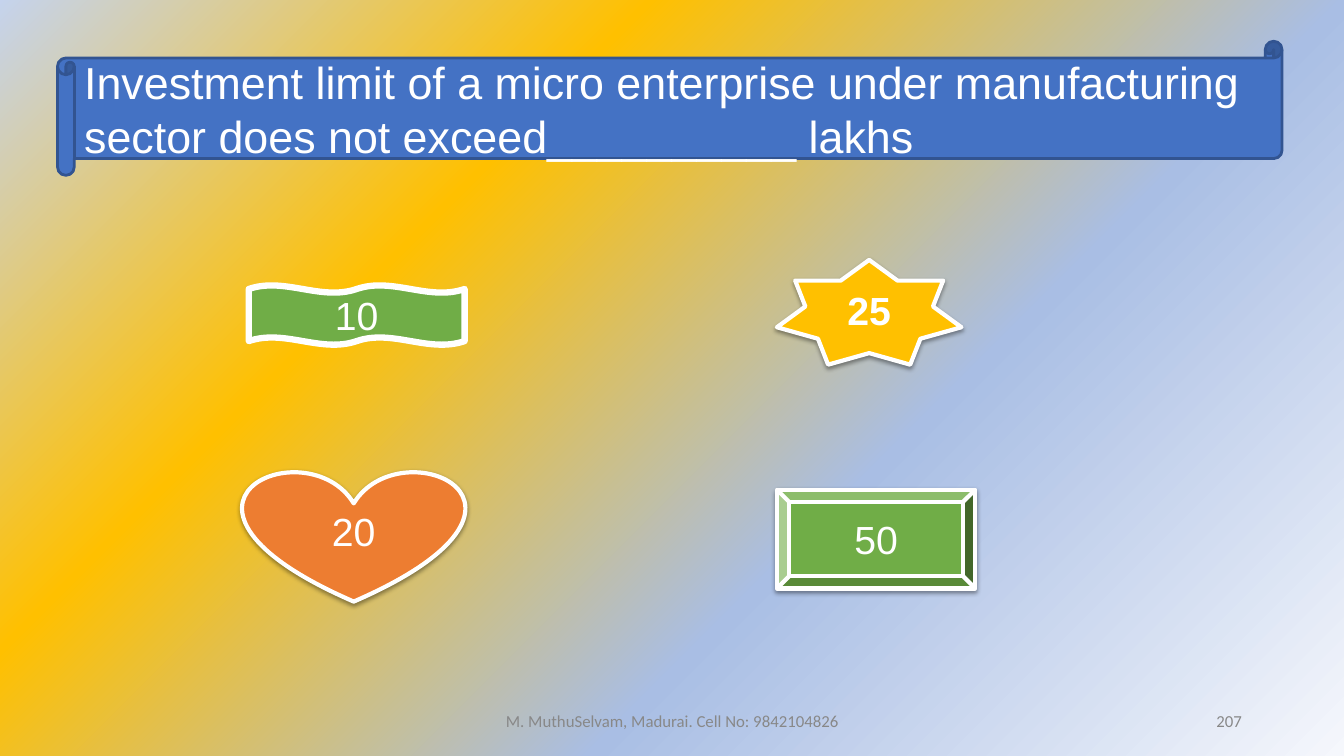
from lxml import etree
from pptx import Presentation
from pptx import util as u
from pptx.dml.color import RGBColor
from pptx.enum import shapes, text
from pptx.oxml.ns import qn

WHITE = RGBColor(0xFF, 0xFF, 0xFF)
BLUE = RGBColor(0x44, 0x72, 0xC4)
DARK_BLUE = RGBColor(0x32, 0x54, 0x91)
GREEN = RGBColor(0x70, 0xAD, 0x47)
ORANGE = RGBColor(0xED, 0x7D, 0x31)
GOLD = RGBColor(0xFF, 0xC0, 0x00)
GREY = RGBColor(0x88, 0x88, 0x88)
PALE_BLUE = RGBColor(0xC5, 0xD3, 0xED)
MID_BLUE = RGBColor(0xA9, 0xBE, 0xE4)
NEAR_WHITE = RGBColor(0xF5, 0xF7, 0xFC)

MSO = shapes.MSO_SHAPE
LEFT, CENTER, RIGHT = text.PP_ALIGN.LEFT, text.PP_ALIGN.CENTER, text.PP_ALIGN.RIGHT


def write(sp, words, size, color, align, font="Arial", bold=False):
    """Put one middle-anchored, wrapped paragraph into a shape."""
    tf = sp.text_frame
    tf.text = words
    tf.word_wrap = True
    tf.vertical_anchor = text.MSO_ANCHOR.MIDDLE
    p = tf.paragraphs[0]
    p.alignment = align
    r = p.runs[0]
    r.font.name = font
    r.font.size = u.Pt(size)
    r.font.bold = bold
    r.font.color.rgb = color


def add_filled(kind, box, fill, line, width):
    sp = s.shapes.add_shape(kind, *map(u.Cm, box))
    sp.shadow.inherit = False
    sp.fill.solid()
    sp.fill.fore_color.rgb = fill
    sp.line.color.rgb = line
    sp.line.width = u.Pt(width)
    return sp


prs = Presentation()
prs.slide_width, prs.slide_height = u.Cm(33.87), u.Cm(19.05)
s = prs.slides.add_slide(prs.slide_layouts[6])

# Diagonal four-colour background
bg = s.background.fill
bg.gradient()
bg.gradient_angle = 315
stops = s.element.find(".//" + qn("a:gsLst"))
for stop in list(stops):
    stops.remove(stop)
for percent, color in ((0, PALE_BLUE), (31, GOLD), (64, MID_BLUE), (100, NEAR_WHITE)):
    stop = etree.SubElement(stops, qn("a:gs"), pos=str(percent * 1000))
    etree.SubElement(stop, qn("a:srgbClr"), val=str(color))

# Answer choices: shape, box in cm, fill, line width, answer, bold, shadow
choices = [
    (MSO.HEART, (6.12, 11.86, 5.59, 3.3), ORANGE, 3, "20", False, True),
    (MSO.STAR_7_POINT, (19.58, 6.55, 4.65, 2.64), GOLD, 3, "25", True, True),
    (MSO.BEVEL, (19.58, 12.34, 5, 2.49), GREEN, 3, "50", False, True),
    (MSO.DOUBLE_WAVE, (6.27, 7.19, 5.44, 1.5), GREEN, 4.5, "10", False, False),
]
for kind, box, fill, width, answer, bold, shadowed in choices:
    sp = add_filled(kind, box, fill, WHITE, width)
    write(sp, answer, 28, WHITE, CENTER, bold=bold)
    if shadowed:
        effects = sp.element.spPr.find(qn("a:effectLst"))
        shadow = etree.SubElement(effects, qn("a:outerShdw"), blurRad="40000",
                                  dist="20000", dir="5400000", rotWithShape="0")
        black = etree.SubElement(shadow, qn("a:srgbClr"), val="000000")
        etree.SubElement(black, qn("a:alpha"), val="38000")

# Question
question = add_filled(MSO.HORIZONTAL_SCROLL, (1.45, 1.04, 30.86, 3.38), BLUE, DARK_BLUE, 2)
write(question, "Investment limit of a micro enterprise under manufacturing "
      "sector does not exceed__________ lakhs", 32, WHITE, LEFT)

# Footer and slide number
for left, width, words, align in (
    (11.23, 11.43, "M. MuthuSelvam, Madurai. Cell No: 9842104826", CENTER),
    (23.93, 7.62, "207", RIGHT),
):
    sp = s.shapes.add_textbox(u.Cm(left), u.Cm(17.65), u.Cm(width), u.Cm(1.02))
    write(sp, words, 12, GREY, align, font="Calibri")

prs.save("out.pptx")
